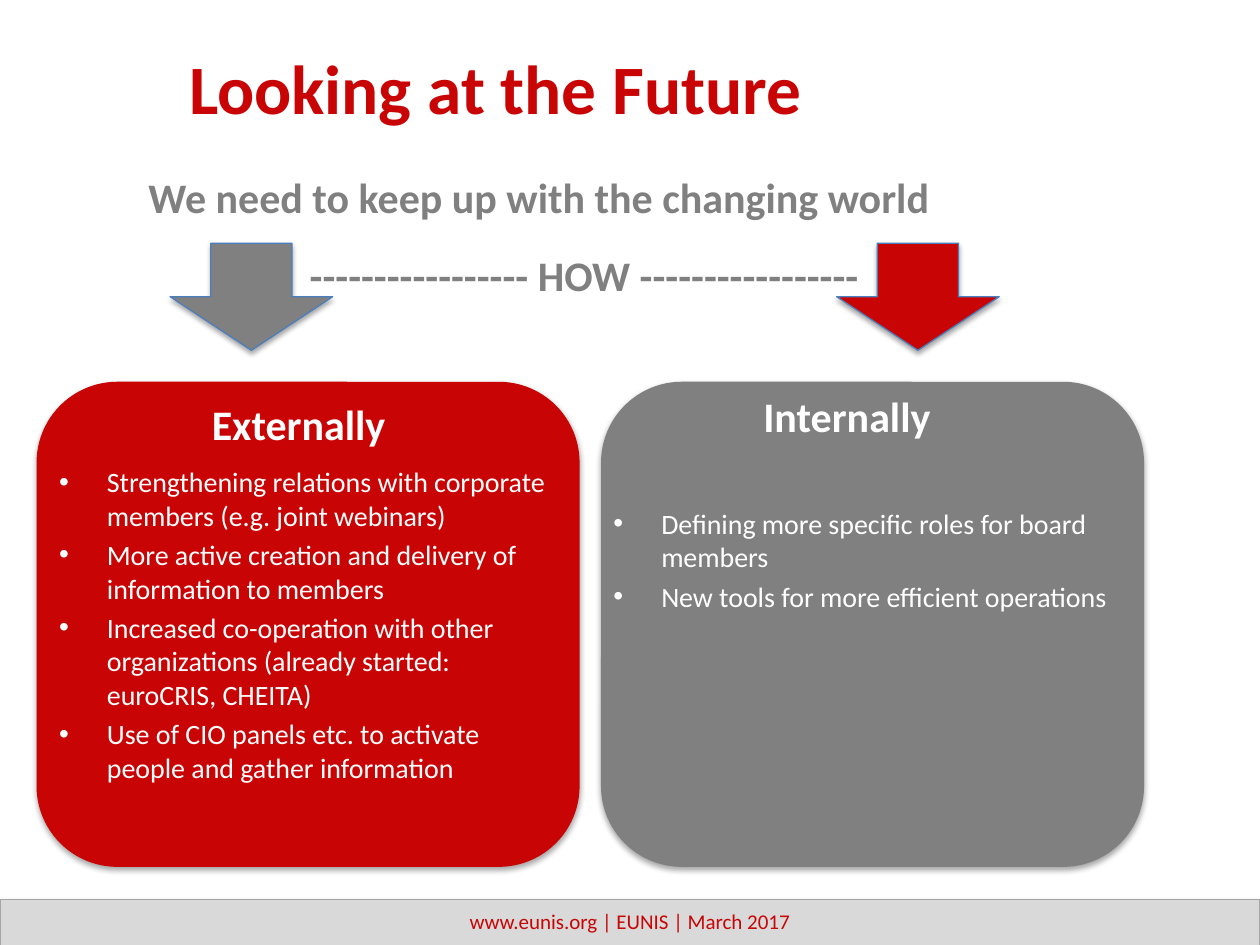
from lxml import etree
from pptx import Presentation
from pptx.dml.color import RGBColor
from pptx.enum.shapes import MSO_SHAPE
from pptx.enum.text import MSO_ANCHOR, PP_ALIGN
from pptx.oxml import parse_xml
from pptx.oxml.ns import nsdecls, qn
from pptx.util import Inches, Pt

RED = RGBColor(0xC9, 0x04, 0x04)
GREY = RGBColor(0x80, 0x80, 0x80)
WHITE = RGBColor(0xFF, 0xFF, 0xFF)
BLUE_LINE = RGBColor(0x4B, 0x7E, 0xBC)
FOOTER_FILL = RGBColor(0xD9, 0xD9, 0xD9)
FOOTER_LINE = RGBColor(0xA6, 0xA6, 0xA6)

SHADOW = (
    f'<a:effectLst {nsdecls("a")}>'
    f'<a:outerShdw blurRad="{Pt(3.1)}" dist="{Pt(1.8)}" dir="5400000" rotWithShape="0">'
    '<a:srgbClr val="000000"><a:alpha val="35000"/></a:srgbClr>'
    '</a:outerShdw></a:effectLst>'
)

EXTERNAL_POINTS = [
    "Strengthening relations with corporate members (e.g. joint webinars)",
    "More active creation and delivery of information to members",
    "Increased co-operation with other organizations (already started: euroCRIS, CHEITA)",
    "Use of CIO panels etc. to activate people and gather information",
]
INTERNAL_POINTS = [
    "Defining more specific roles for board members",
    "New tools for more efficient operations",
]


class SlideBuilder:
    font_name = "Calibri"
    bullet_indent = Inches(0.38)
    bullet_size = 16

    def __init__(self, slide):
        self.slide = slide

    def format_font(self, paragraph, size, color, bold=False):
        values = {"name": self.font_name, "size": Pt(size), "bold": bold}
        for name, value in values.items():
            setattr(paragraph.font, name, value)
        paragraph.font.color.rgb = color

    def title(self, text, left, top, width, height):
        title = self.slide.shapes.title
        position = {"left": left, "top": top, "width": width, "height": height}
        for name, value in position.items():
            setattr(title, name, Inches(value))
        title.text_frame.text = text
        title.text_frame.vertical_anchor = MSO_ANCHOR.MIDDLE
        paragraph = title.text_frame.paragraphs[0]
        paragraph.alignment = PP_ALIGN.LEFT
        self.format_font(paragraph, 39.6, RED, bold=True)

    def shape(self, kind, left, top, width, height, fill, line=None):
        shape = self.slide.shapes.add_shape(
            kind, Inches(left), Inches(top), Inches(width), Inches(height))
        shape.fill.solid()
        shape.fill.fore_color.rgb = fill
        if line is None:
            shape.line.fill.background()
        else:
            shape.line.color.rgb = line
            shape.line.width = Pt(0.75)
        shape.shadow.inherit = False
        properties = shape.element.spPr
        properties.replace(properties.find(qn("a:effectLst")), parse_xml(SHADOW))

    def text_frame(self, left, top, width, height, wrap=True):
        box = self.slide.shapes.add_textbox(
            Inches(left), Inches(top), Inches(width), Inches(height))
        box.text_frame.word_wrap = wrap
        return box.text_frame

    def label(self, text, left, top, width, height=0.5, size=24, color=GREY,
              bold=True, alignment=PP_ALIGN.LEFT, anchor=MSO_ANCHOR.TOP, wrap=True):
        frame = self.text_frame(left, top, width, height, wrap)
        frame.text = text
        frame.vertical_anchor = anchor
        paragraph = frame.paragraphs[0]
        paragraph.alignment = alignment
        self.format_font(paragraph, size, color, bold)

    def bullets(self, points, left, top, width, height):
        frame = self.text_frame(left, top, width, height)
        for index, point in enumerate(points):
            paragraph = frame.add_paragraph() if index else frame.paragraphs[0]
            paragraph.text = point
            if index:
                paragraph.space_before = Pt(0.2 * self.bullet_size)
            properties = paragraph._p.get_or_add_pPr()
            properties.set("marL", str(self.bullet_indent))
            properties.set("indent", str(-self.bullet_indent))
            etree.SubElement(properties, qn("a:buFont"), typeface="Arial")
            etree.SubElement(properties, qn("a:buChar"), char="•")
            self.format_font(paragraph, self.bullet_size, WHITE)


def main():
    presentation = Presentation()
    presentation.slide_width = Inches(10)
    presentation.slide_height = Inches(7.5)
    slide = presentation.slides.add_slide(presentation.slide_layouts[5])
    builder = SlideBuilder(slide)

    builder.shape(MSO_SHAPE.RECTANGLE, 0, 7.14, 10, 0.38, FOOTER_FILL, FOOTER_LINE)
    builder.label("www.eunis.org | EUNIS | March 2017", 0.5, 7.11, 9, 0.4, size=12,
                  color=RED, bold=False, alignment=PP_ALIGN.CENTER,
                  anchor=MSO_ANCHOR.MIDDLE)

    builder.title("Looking at the Future", 1.4, 0.3, 8.1, 0.78)
    builder.label("We need to keep up with the changing world", 1.08, 1.31, 7.89)

    for left, color in ((1.35, GREY), (6.64, RED)):
        builder.shape(MSO_SHAPE.DOWN_ARROW, left, 1.93, 1.29, 0.85, color, BLUE_LINE)
    for left, color in ((0.29, RED), (4.77, GREY)):
        builder.shape(MSO_SHAPE.ROUNDED_RECTANGLE, left, 3.03, 4.31, 3.85, color)

    dashes = "-" * 17
    builder.label(f"{dashes} HOW {dashes}", 2.36, 1.93, 5.57)

    builder.label("Externally", 1.43, 3.11, 1.88, color=WHITE,
                  alignment=PP_ALIGN.CENTER)
    builder.bullets(EXTERNAL_POINTS, 0.37, 3.64, 4.15, 2.69)

    builder.label("Internally", 5.96, 3.05, 1.54, color=WHITE, wrap=False)
    builder.bullets(INTERNAL_POINTS, 4.77, 3.97, 4.2, 2.16)

    presentation.save("out.pptx")


if __name__ == "__main__":
    main()
